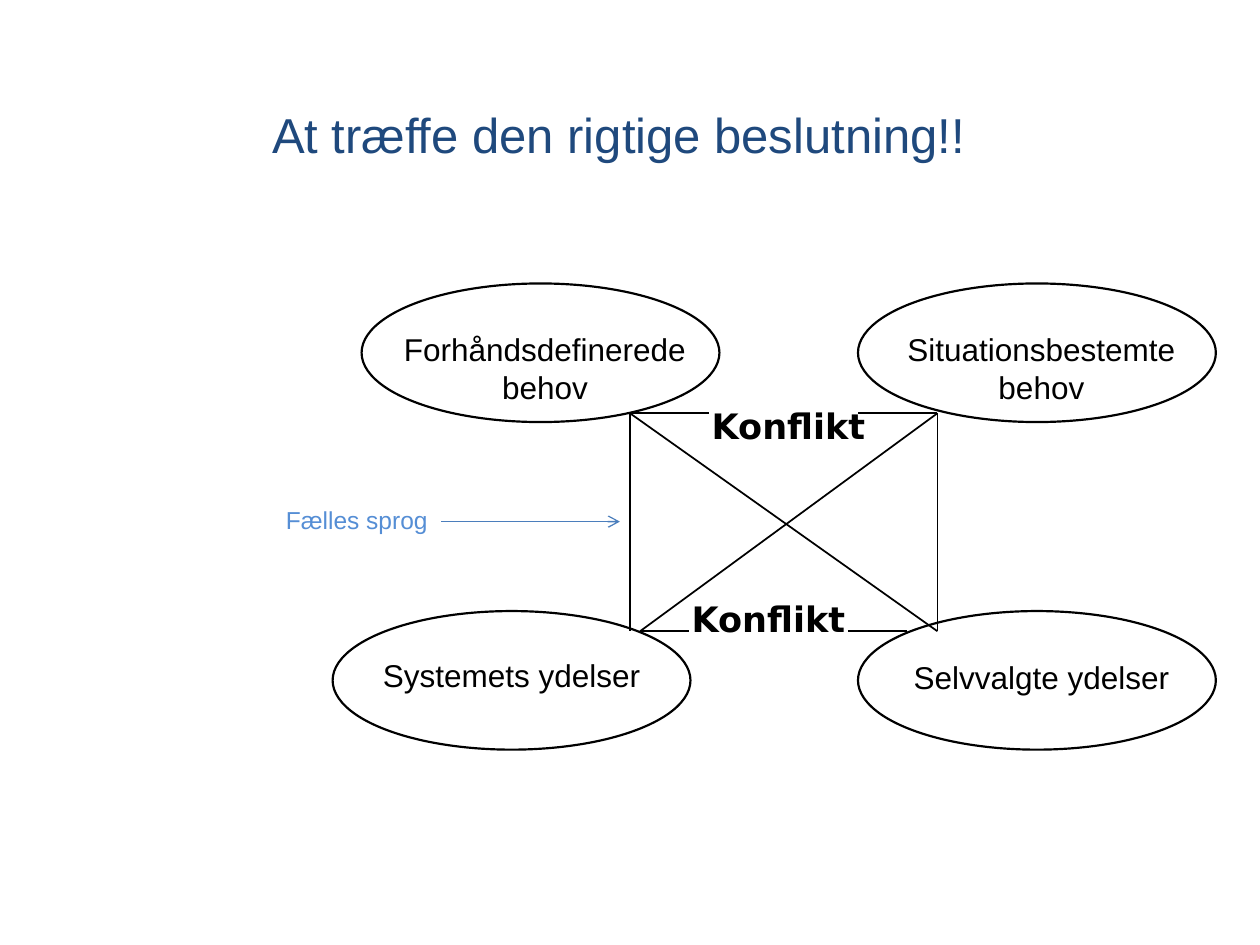
"""Build a slide on conflicts between needs and services in decision making."""
import pptx
import pptx.dml.color
import pptx.enum.shapes
import pptx.enum.text
import pptx.oxml
import pptx.oxml.ns
import pptx.util
from pptx.util import Inches

ALIGN = pptx.enum.text.PP_ALIGN
ANCHOR = pptx.enum.text.MSO_ANCHOR
SHAPES = pptx.enum.shapes


def color(value):
    """Turn a hex string into a colour."""
    return pptx.dml.color.RGBColor.from_string(value)


def add_text(page, text, area, font, align=ALIGN.LEFT, **frame_format):
    """Place one paragraph of text in a box."""
    box = page.shapes.add_textbox(*map(Inches, area))
    for name, value in {"word_wrap": True, **frame_format}.items():
        setattr(box.text_frame, name, value)
    para = box.text_frame.paragraphs[0]
    para.alignment = align
    span = para.add_run()
    span.text = text
    for name, value in font.items():
        if name == "color":
            span.font.color.rgb = color(value)
        else:
            setattr(span.font, name, value)


deck = pptx.Presentation()
deck.slide_width, deck.slide_height = Inches(10), Inches(7.5)
page = deck.slides.add_slide(deck.slide_layouts[6])

title_font = {"name": "Arial", "size": pptx.util.Pt(28), "color": "1F497D"}
label_font = {"name": "Arial", "size": pptx.util.Pt(18), "color": "000000"}
conflict_font = {"name": "DejaVu Sans", "size": pptx.util.Pt(20), "bold": True, "color": "000000"}
language_font = {"name": "Arial", "size": pptx.util.Pt(14), "color": "558ED5"}

add_text(page, "At træffe den rigtige beslutning!!", (1.06, 0.44, 8.03, 1.25), title_font,
         ALIGN.CENTER, vertical_anchor=ANCHOR.MIDDLE, margin_right=Inches(0.43))

top_row, bottom_row = 2.25, 4.85
right_column = 6.81
topics = [
    ("Systemets ydelser ", (2.64, 5.16, 2.91, 0.4), 2.64, bottom_row),
    ("Selvvalgte ydelser", (7.12, 5.17, 2.29, 0.4), right_column, bottom_row),
    ("Forhåndsdefinerede behov", (2.87, 2.57, 2.91, 0.7), 2.87, top_row),
    ("Situationsbestemte behov", (right_column, 2.57, 2.91, 0.7), right_column, top_row),
]
for text, area, left, top in topics:
    add_text(page, text, area, label_font, ALIGN.CENTER)
    oval = page.shapes.add_shape(SHAPES.MSO_SHAPE.OVAL, Inches(left), Inches(top),
                                 Inches(2.84), Inches(1.1))
    oval.shadow.inherit = False
    oval.fill.background()
    oval.line.color.rgb = color("000000")
    oval.line.width = pptx.util.Pt(1.25)

for left, top in [(5.55, 3.16), (5.39, 4.69)]:
    add_text(page, "Konflikt", (left, top, 2.36, 0.43), conflict_font)

west, east, north, south = 5, 7.44, 3.28, 5.01
inner_west = 5.08
lines = [
    (inner_west, south, 5.47, south, 1.25, "000000"),
    (6.73, south, 7.2, south, 1.25, "000000"),
    (west, north, 5.63, north, 1.25, "000000"),
    (east, north, right_column, north, 1.25, "000000"),
    (west, north, east, south, 1, "000000"),
    (inner_west, south, east, north, 1, "000000"),
    (west, north, west, south, 1, "000000"),
    (east, north, east, south, 1, "000000"),
    (3.5, 4.14, 4.92, 4.14, 0.75, "4B7EBC"),
]
for *ends, width, hue in lines:
    connector = page.shapes.add_connector(SHAPES.MSO_CONNECTOR.STRAIGHT, *map(Inches, ends))
    connector.line.color.rgb = color(hue)
    connector.line.width = pptx.util.Pt(width)
    connector.element.spPr.append(pptx.oxml.parse_xml(
        f"<a:effectLst {pptx.oxml.ns.nsdecls('a')}/>"))

language_arrow = connector
language_arrow.line._get_or_add_ln().append(pptx.oxml.parse_xml(
    f"<a:tailEnd {pptx.oxml.ns.nsdecls('a')} type='arrow'/>"))
add_text(page, "Fælles sprog", (2.17, 3.96, 2.05, 0.34), language_font)

deck.save("out.pptx")
